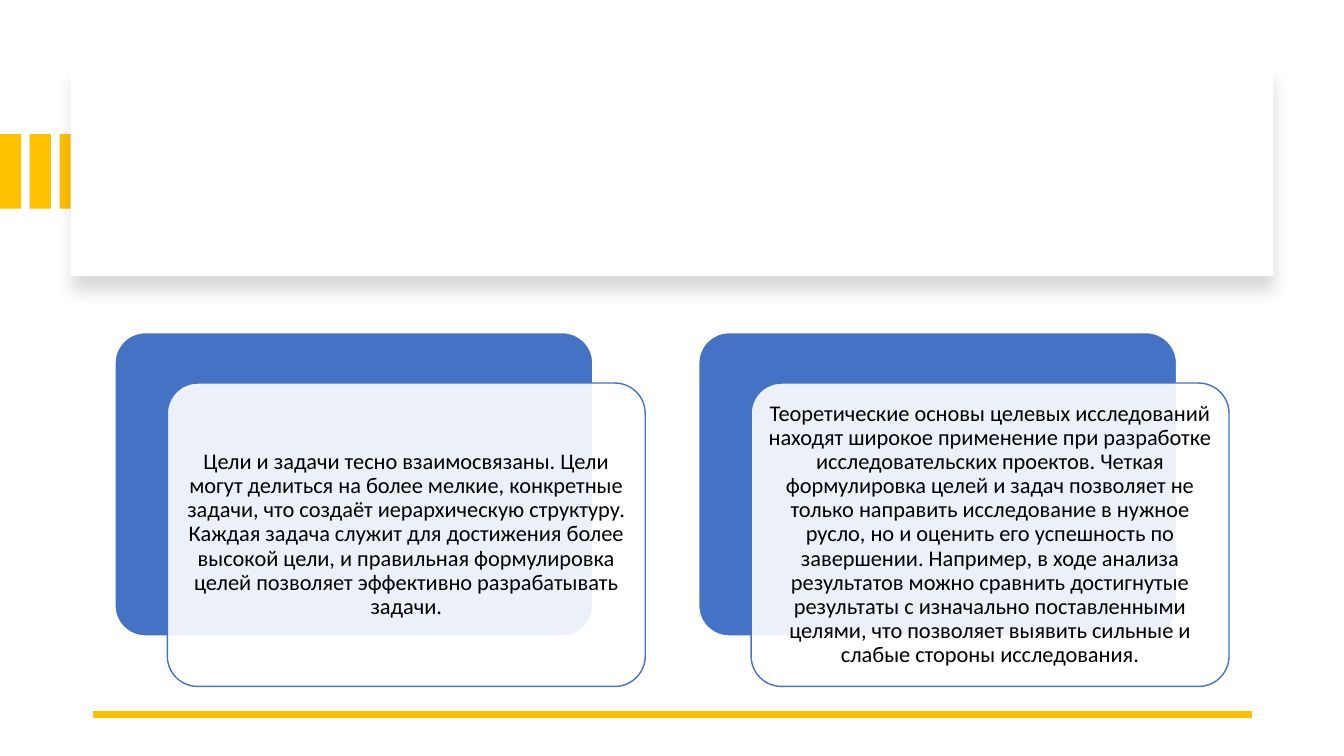
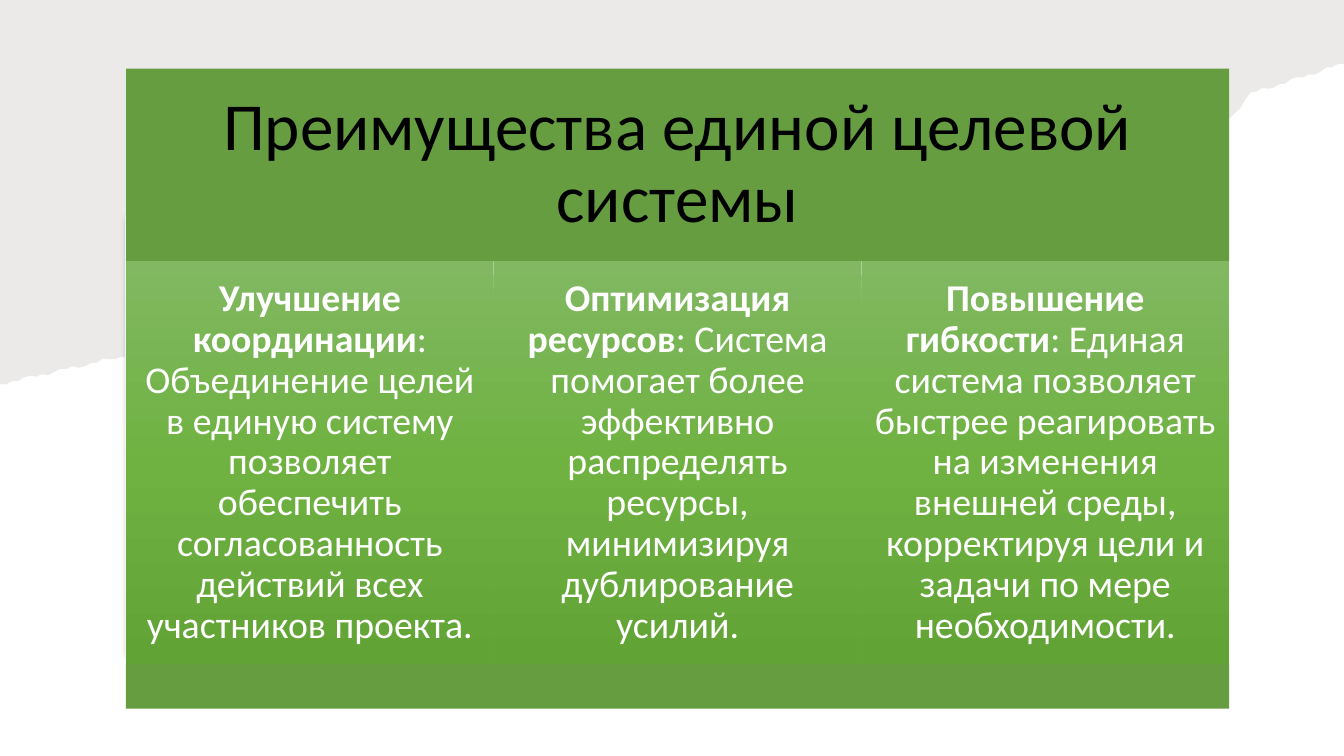
import copy
import math

import pptx
import pptx.dml.color
import pptx.enum.shapes
import pptx.enum.text
import pptx.oxml
import pptx.oxml.ns
import pptx.util
from pptx.util import Inches

RGBColor = pptx.dml.color.RGBColor
Shapes = pptx.enum.shapes.MSO_SHAPE
qn = pptx.oxml.ns.qn
A_NAMESPACE = pptx.oxml.ns.nsdecls("a")

# Shared look
WHITE = RGBColor(0xFF, 0xFF, 0xFF)
BLACK = RGBColor(0x00, 0x00, 0x00)
GOLD = RGBColor(0xFF, 0xC0, 0x00)
BLUE = RGBColor(0x44, 0x72, 0xC4)
GREEN = RGBColor(0x66, 0x9D, 0x40)
NOTE_GREY = RGBColor(0xF2, 0xF2, 0xF2)
PAPER = RGBColor(0x82, 0x76, 0x6A)
COLUMN_GRADIENT = [
    RGBColor(0x81, 0xB8, 0x61),
    RGBColor(0x6F, 0xB2, 0x42),
    RGBColor(0x62, 0xA3, 0x36),
]
FONT = "Calibri"
SLIDE_WIDTH, SLIDE_HEIGHT = 13.33, 7.5
PANEL_SHADOW = {"alpha": 15, "blur": 11, "distance": 10, "angle": 90}
NOTE_SHADOW = {"alpha": 27, "blur": 4, "distance": 1, "angle": 50}


def style_shape(shape, fill, line=None, alpha=None, shadow=None):
    """Flat fill, optional 1 pt outline, opacity in percent and shadow."""
    shape.shadow.inherit = False
    shape.fill.solid()
    shape.fill.fore_color.rgb = fill
    if line is None:
        shape.line.fill.background()
    else:
        shape.line.color.rgb = line
        shape.line.width = pptx.util.Pt(1)
    if alpha is not None:
        color = shape.element.spPr.find(qn("a:solidFill")).find(qn("a:srgbClr"))
        color.append(pptx.oxml.parse_xml(f'<a:alpha {A_NAMESPACE} val="{alpha * 1000}"/>'))
    if shadow is not None:
        shape.element.spPr.find(qn("a:effectLst")).append(pptx.oxml.parse_xml(
            f'<a:outerShdw {A_NAMESPACE} blurRad="{pptx.util.Pt(shadow["blur"])}" '
            f'dist="{pptx.util.Pt(shadow["distance"])}" dir="{shadow["angle"] * 60000}" '
            'algn="t" rotWithShape="0"><a:srgbClr val="000000">'
            f'<a:alpha val="{shadow["alpha"] * 1000}"/></a:srgbClr></a:outerShdw>'))


def write_text(shape, runs, size, color, inset):
    """Centred paragraph made of (text, bold) runs."""
    frame = shape.text_frame
    frame_format = {
        "word_wrap": True,
        "auto_size": pptx.enum.text.MSO_AUTO_SIZE.NONE,
        "vertical_anchor": pptx.enum.text.MSO_ANCHOR.MIDDLE,
    }
    for side in ("left", "right", "top", "bottom"):
        frame_format[f"margin_{side}"] = Inches(inset)
    for name, value in frame_format.items():
        setattr(frame, name, value)
    paragraph = frame.paragraphs[0]
    paragraph.alignment = pptx.enum.text.PP_ALIGN.CENTER
    paragraph.line_spacing = 0.9
    for text, bold in runs:
        run = paragraph.add_run()
        run.text = text
        run_format = {"name": FONT, "size": pptx.util.Pt(size), "bold": bold}
        for name, value in run_format.items():
            setattr(run.font, name, value)
        run.font.color.rgb = color


deck = pptx.Presentation()
deck.slide_width = Inches(SLIDE_WIDTH)
deck.slide_height = Inches(SLIDE_HEIGHT)
TITLE_ONLY, BLANK = deck.slide_layouts[5], deck.slide_layouts[6]

# Slide 1: goals and tasks
goals = deck.slides.add_slide(BLANK)

# Gold stripes, running under the white panel
STRIPE_COUNT, STRIPE_PITCH = 3, 0.295
for index in range(STRIPE_COUNT):
    stripe = goals.shapes.add_shape(
        Shapes.RECTANGLE, Inches(index * STRIPE_PITCH), Inches(1.33),
        Inches(0.21), Inches(0.74))
    style_shape(stripe, GOLD)

panel = goals.shapes.add_shape(
    Shapes.RECTANGLE, Inches(0.7), Inches(0.67), Inches(11.93), Inches(2.07))
style_shape(panel, WHITE, shadow=PANEL_SHADOW)

# Gold rule at the foot
RULE_TOP = 7.09
foot_rule = goals.shapes.add_connector(
    pptx.enum.shapes.MSO_CONNECTOR.STRAIGHT,
    Inches(12.42), Inches(RULE_TOP), Inches(0.92), Inches(RULE_TOP))
foot_rule.line.color.rgb = GOLD
foot_rule.line.width = pptx.util.Pt(4.5)
foot_rule.element.spPr.append(pptx.oxml.parse_xml(f"<a:effectLst {A_NAMESPACE}/>"))

# Two text cards, each shifted over a blue backing of the same size
card_texts = [
    "Цели и задачи тесно взаимосвязаны. Цели могут делиться на более мелкие, "
    "конкретные задачи, что создаёт иерархическую структуру. Каждая задача служит "
    "для достижения более высокой цели, и правильная формулировка целей позволяет "
    "эффективно разрабатывать задачи.",
    "Теоретические основы целевых исследований находят широкое применение при "
    "разработке исследовательских проектов. Четкая формулировка целей и задач "
    "позволяет не только направить исследование в нужное русло, но и оценить его "
    "успешность по завершении. Например, в ходе анализа результатов можно сравнить "
    "достигнутые результаты с изначально поставленными целями, что позволяет выявить "
    "сильные и слабые стороны исследования.",
]
CARD_LEFT, CARD_TOP, CARD_PITCH = 1.14, 3.3, 5.79
CARD_WIDTH, CARD_HEIGHT = 4.74, 3.01
card_layers = [
    {"shift": (0, 0), "style": {"fill": BLUE, "line": WHITE}},
    {"shift": (0.52, 0.5), "style": {"fill": WHITE, "line": BLUE, "alpha": 90}},
]
for index, text in enumerate(card_texts):
    for layer in card_layers:
        shift_x, shift_y = layer["shift"]
        card = goals.shapes.add_shape(
            Shapes.ROUNDED_RECTANGLE,
            Inches(CARD_LEFT + index * CARD_PITCH + shift_x), Inches(CARD_TOP + shift_y),
            Inches(CARD_WIDTH), Inches(CARD_HEIGHT))
        card.adjustments[0] = 0.1
        style_shape(card, **layer["style"])
    # The upper layer, drawn last, carries the text
    write_text(card, [(text, False)], 16, BLACK, 0.07)

# Slide 2: advantages of a single goal system
advantages = deck.slides.add_slide(TITLE_ONLY)

# Torn paper: a sloping edge from right to left, roughened by two small waves
edge_bends = [(SLIDE_WIDTH, 0.63), (12.4, 0.93), (12.1, 1.3), (1.2, 3.54), (0, 3.81)]
TEAR_STEP, TEAR_DEPTH = 0.06, 0.012
torn_edge = [(SLIDE_WIDTH, 0)]
for (start_x, start_y), (end_x, end_y) in zip(edge_bends, edge_bends[1:]):
    steps = math.ceil((start_x - end_x) / TEAR_STEP)
    for step in range(steps):
        x = start_x + (end_x - start_x) * step / steps
        y = start_y + (end_y - start_y) * step / steps
        tear = TEAR_DEPTH * (math.sin(17 * x) + math.sin(41 * x))
        torn_edge.append((x, y + tear))
torn_edge.append(edge_bends[-1])
paper_outline = advantages.shapes.build_freeform(0, 0)
paper_outline.add_line_segments([(Inches(x), Inches(y)) for x, y in torn_edge])
style_shape(paper_outline.convert_to_shape(), PAPER, alpha=15)

# Pale note behind the columns
note = advantages.shapes.add_shape(
    Shapes.RECTANGLE, Inches(1.24), Inches(2.14), Inches(3.93), Inches(4.36))
style_shape(note, NOTE_GREY, shadow=NOTE_SHADOW)

# Title band, lifted above the paper
TABLE_LEFT, TABLE_WIDTH = 1.25, 10.94
TITLE_TOP, COLUMN_TOP, COLUMN_HEIGHT = 0.68, 2.59, 4
title = advantages.shapes.title
title_place = {
    "left": TABLE_LEFT, "top": TITLE_TOP,
    "width": TABLE_WIDTH, "height": COLUMN_TOP - TITLE_TOP,
}
for name, value in title_place.items():
    setattr(title, name, Inches(value))
style_shape(title, GREEN)
write_text(title, [("Преимущества единой целевой системы", False)], 48, BLACK, 0.2)
title.element.getparent().append(title.element)

# Three gradient columns of equal width
columns = [
    ("Улучшение координации",
     ": Объединение целей в единую систему позволяет обеспечить согласованность "
     "действий всех участников проекта."),
    ("Оптимизация ресурсов",
     ": Система помогает более эффективно распределять ресурсы, минимизируя "
     "дублирование усилий."),
    ("Повышение гибкости",
     ": Единая система позволяет быстрее реагировать на изменения внешней среды, "
     "корректируя цели и задачи по мере необходимости."),
]
column_width = TABLE_WIDTH / len(columns)
for index, (heading, detail) in enumerate(columns):
    column = advantages.shapes.add_shape(
        Shapes.RECTANGLE, Inches(TABLE_LEFT + index * column_width), Inches(COLUMN_TOP),
        Inches(column_width), Inches(COLUMN_HEIGHT))
    style_shape(column, GREEN)
    column.fill.gradient()
    column.fill.gradient_angle = 270
    # A new gradient has two stops; a third goes between them
    stop_list = column.element.spPr.find(qn("a:gradFill")).find(qn("a:gsLst"))
    stop_list.insert(1, copy.deepcopy(stop_list[0]))
    for order, (stop, color) in enumerate(zip(column.fill.gradient_stops, COLUMN_GRADIENT)):
        stop.position = order / (len(COLUMN_GRADIENT) - 1)
        stop.color.rgb = color
    write_text(column, [(heading, True), (detail, False)], 27, WHITE, 0.11)

# Closing band
closing_band = advantages.shapes.add_shape(
    Shapes.RECTANGLE, Inches(TABLE_LEFT), Inches(COLUMN_TOP + COLUMN_HEIGHT),
    Inches(TABLE_WIDTH), Inches(0.44))
style_shape(closing_band, GREEN)

deck.save("out.pptx")
